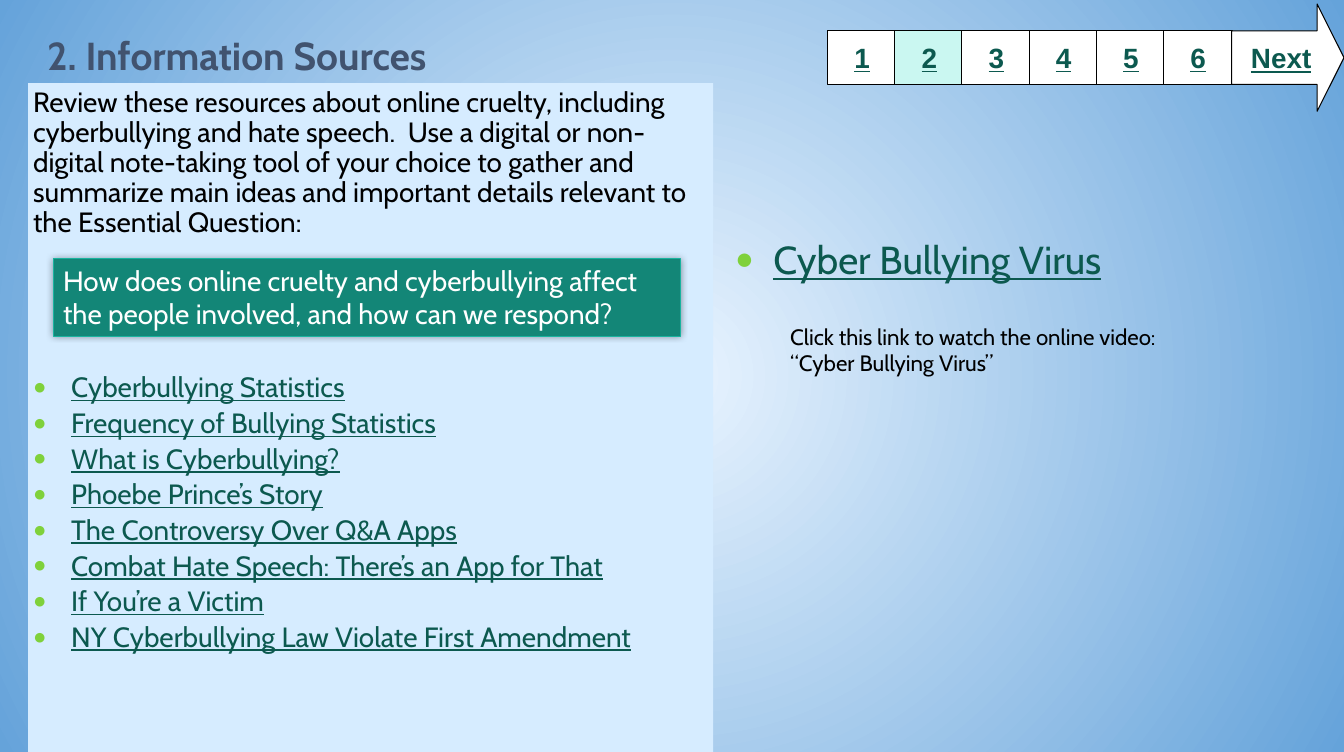
import pptx
import pptx.util
import pptx.dml.color
import pptx.enum.shapes
import pptx.enum.text
import pptx.oxml
import pptx.oxml.ns

# Content
TITLE = "2. Information Sources"
INTRO = (
    "Review these resources about online cruelty, including cyberbullying and hate speech.  "
    "Use a digital or non-digital note-taking tool of your choice to gather and summarize "
    "main ideas and important details relevant to the Essential Question:"
)
QUESTION = ("How does online cruelty and cyberbullying affect the people involved, "
            "and how can we respond?")
SOURCES = [
    "Cyberbullying Statistics",
    "Frequency of Bullying Statistics",
    "What is Cyberbullying?",
    "Phoebe Prince’s Story",
    "The Controversy Over Q&A Apps",
    "Combat Hate Speech: There’s an App for That",
    "If You’re a Victim",
    "NY Cyberbullying Law Violate First Amendment",
]
VIDEO = "Cyber Bullying Virus"
VIDEO_NOTE = ["Click this link to watch the online video:", "“Cyber Bullying Virus”"]
PAGES = ["1", "2", "3", "4", "5", "6"]
CURRENT = "2"

COLORS = {
    "bg_center": "E9F4FF", "bg_edge": "65A3DA", "title": "41536F", "panel": "D6ECFF",
    "text": "000000", "link": "0C594F", "bullet": "7FD13B", "white": "FFFFFF",
    "current": "CAF7F1", "question": "138677", "question_line": "1AB39F",
}

# Layout, 100 px to the inch
PX = 9144
INSET = 5
INDENT = 38
NAV_LEFT, NAV_TOP, NAV_W, NAV_H, NAV_STEP = 825, 30, 69, 54, 67

Pt = pptx.util.Pt
SHAPES = pptx.enum.shapes.MSO_SHAPE
ALIGN = pptx.enum.text.PP_ALIGN
ANCHOR = pptx.enum.text.MSO_ANCHOR
NS = pptx.oxml.ns.nsdecls("a")


def rgb(name):
    return pptx.dml.color.RGBColor.from_string(COLORS[name])


def box(*px):
    return [v * PX for v in px]


def place(sp, *px):
    sp.left, sp.top, sp.width, sp.height = box(*px)


def add_xml(parent, *parts):
    for part in parts:
        tag, rest = part
        parent.append(pptx.oxml.parse_xml(f"<a:{tag} {NS}{rest}"))


def write(tf, text, size=20, color="text", font="Cabin", bold=False, underline=False,
          align=ALIGN.LEFT, before=0, spacing=1.0, bullet=False):
    """Add a paragraph to tf, filling the first one when it is empty."""
    p = tf.paragraphs[0] if not tf.text else tf.add_paragraph()
    pPr = p._p.get_or_add_pPr()
    pPr.set("marL", str(INDENT * PX if bullet else 0))
    pPr.set("indent", str(-INDENT * PX if bullet else 0))
    if bullet:
        add_xml(pPr,
                ("buClr", f'><a:srgbClr val="{COLORS["bullet"]}"/></a:buClr>'),
                ("buSzPct", ' val="80000"/>'),
                ("buFont", ' typeface="Arial"/>'),
                ("buChar", ' char="●"/>'))
    else:
        add_xml(pPr, ("buNone", "/>"))
    p.alignment, p.line_spacing, p.space_before = align, spacing, Pt(before)
    r = p.add_run()
    r.text = text
    r.font.name, r.font.size, r.font.bold = font, Pt(size), bold
    r.font.underline = underline
    r.font.color.rgb = rgb(color)


def add_block(s, kind, px, fill, line="text", line_width=0.75):
    sp = s.shapes.add_shape(kind, *box(*px))
    sp.shadow.inherit = False
    sp.fill.solid()
    sp.fill.fore_color.rgb = rgb(fill)
    sp.line.color.rgb = rgb(line)
    sp.line.width = Pt(line_width)
    return sp


def add_nav(s, kind, px, text, fill):
    sp = add_block(s, kind, px, fill)
    sp.text_frame.word_wrap = False
    sp.text_frame.vertical_anchor = ANCHOR.MIDDLE
    write(sp.text_frame, text, font="Arial", color="link", bold=True, underline=True,
          align=ALIGN.CENTER)
    return sp


def body_frame(sp, top_inset=INSET):
    tf = sp.text_frame
    tf.auto_size = pptx.enum.text.MSO_AUTO_SIZE.NONE
    tf.word_wrap = True
    tf.vertical_anchor = ANCHOR.TOP
    tf.margin_left = tf.margin_right = tf.margin_bottom = INSET * PX
    tf.margin_top = top_inset * PX
    return tf


def main():
    prs = pptx.Presentation()
    prs.slide_width, prs.slide_height = box(1340, 750)
    s = prs.slides.add_slide(prs.slide_layouts[3])
    title, sources, video = s.placeholders

    # Radial background
    bg = s.background.fill
    bg.gradient()
    for stop, name in zip(bg.gradient_stops, ("bg_center", "bg_edge")):
        stop.color.rgb = rgb(name)
    lin = s._element.find(".//" + pptx.oxml.ns.qn("a:lin"))
    grad = lin.getparent()
    grad.remove(lin)
    add_xml(grad, ("path", ' path="circle"><a:fillToRect l="50000" t="50000" '
                           'r="50000" b="50000"/></a:path>'))

    # Title
    place(title, 37, 25, 467, 58)
    title.text_frame.auto_size = pptx.enum.text.MSO_AUTO_SIZE.NONE
    title.text_frame.vertical_anchor = ANCHOR.BOTTOM
    write(title.text_frame, TITLE, size=28, color="title", bold=True)

    # Source list, with room for the question after the intro
    place(sources, 28, 83, 683, 667)
    sources.fill.solid()
    sources.fill.fore_color.rgb = rgb("panel")
    tf = body_frame(sources)
    write(tf, INTRO, spacing=0.9)
    for i, source in enumerate(SOURCES):
        write(tf, source, color="link", underline=True, spacing=0.9, bullet=True,
              before=4 if i else 97)

    # Video link
    place(video, 728, 175, 592, 495)
    write(body_frame(video, top_inset=60), VIDEO, size=28, color="link", underline=True,
          bullet=True)

    # Page navigation
    for i, page in enumerate(PAGES):
        add_nav(s, SHAPES.RECTANGLE, (NAV_LEFT + i * NAV_STEP, NAV_TOP, NAV_W, NAV_H),
                page, "current" if page == CURRENT else "white")
    arrow = add_nav(s, SHAPES.RIGHT_ARROW, (1228, 4, 112, 107), "Next", "white")
    arrow.adjustments[1] = 0.25

    # Video note
    note = s.shapes.add_textbox(*box(778, 317, 467, 64))
    note.text_frame.word_wrap = True
    for line in VIDEO_NOTE:
        write(note.text_frame, line, size=16)

    # Essential question with a soft shadow
    sp = add_block(s, SHAPES.RECTANGLE, (53, 258, 625, 77), "question", "question_line", 0.4)
    effects = sp._element.spPr.find(pptx.oxml.ns.qn("a:effectLst"))
    add_xml(effects, ("outerShdw", f' blurRad="{Pt(5)}" dist="0"><a:srgbClr val="000000">'
                                   '<a:alpha val="40000"/></a:srgbClr></a:outerShdw>'))
    sp.text_frame.word_wrap = True
    sp.text_frame.vertical_anchor = ANCHOR.TOP
    write(sp.text_frame, QUESTION, color="white")

    prs.save("out.pptx")


if __name__ == "__main__":
    main()
